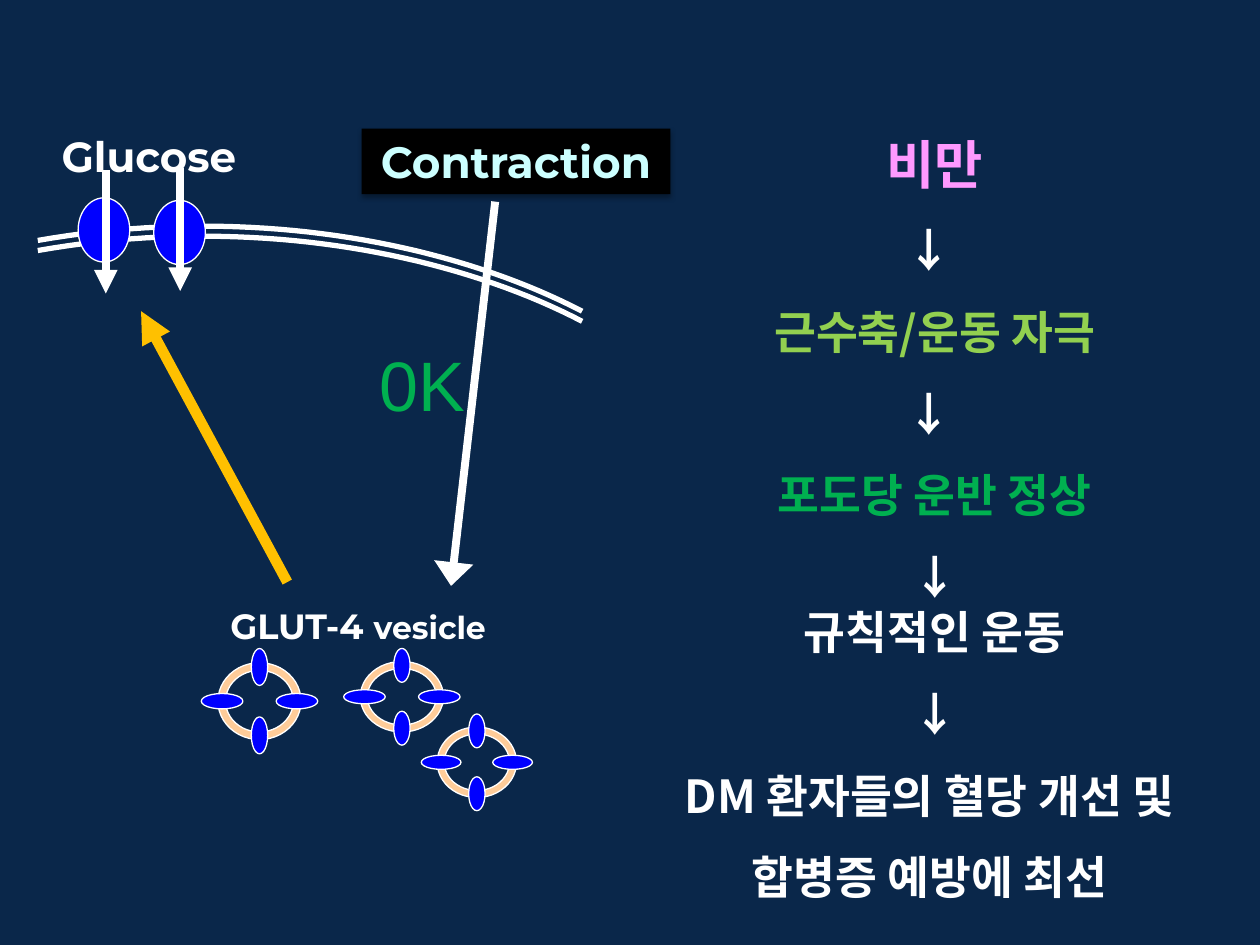
from lxml.etree import SubElement
from pptx import Presentation
from pptx.dml.color import RGBColor
from pptx.enum.shapes import MSO_CONNECTOR, MSO_SHAPE
from pptx.enum.text import MSO_ANCHOR, MSO_AUTO_SIZE, PP_ALIGN
from pptx.oxml.ns import qn
from pptx.util import Inches, Pt

NAVY = RGBColor(0x0A, 0x27, 0x4A)
WHITE = RGBColor(0xFF, 0xFF, 0xFF)
BLACK = RGBColor(0x00, 0x00, 0x00)
BLUE = RGBColor(0x00, 0x00, 0xFF)
PEACH = RGBColor(0xFF, 0xCC, 0x99)
AMBER = RGBColor(0xFF, 0xC0, 0x00)
PINK = RGBColor(0xFF, 0x99, 0xFF)
LIME = RGBColor(0x92, 0xD0, 0x50)
GREEN = RGBColor(0x00, 0xB0, 0x50)
ICE = RGBColor(0xCC, 0xFF, 0xFF)

HEAD = {"name": "Montserrat", "bold": True}
BODY = {"name": "Noto Sans CJK KR", "bold": True}
LABEL = {"word_wrap": False, "auto_size": MSO_AUTO_SIZE.SHAPE_TO_FIT_TEXT}
CENTRED = {"word_wrap": True, "vertical_anchor": MSO_ANCHOR.MIDDLE}


def apply(target, values):
    for key, value in values.items():
        setattr(target, key, value)


def add_run(p, text, size, color, font):
    r = p.add_run()
    r.text = text
    apply(r.font, {**font, "size": Pt(size)})
    r.font.color.rgb = color
    SubElement(r.font._element, qn("a:ea"), typeface=font["name"])


def add_text(s, box, frame):
    tf = s.shapes.add_textbox(*map(Inches, box)).text_frame
    apply(tf, frame)
    return tf


def add_preset(s, kind, box, fill, line=WHITE):
    sp = s.shapes.add_shape(kind, *map(Inches, box))
    sp.shadow.inherit = False
    sp.fill.solid()
    sp.fill.fore_color.rgb = fill
    if line is None:
        sp.line.fill.background()
    else:
        sp.line.color.rgb = line
        sp.line.width = Pt(0.75)
    return sp


def add_arrow(s, start, end, color, width, head="med"):
    c = s.shapes.add_connector(MSO_CONNECTOR.STRAIGHT, *map(Inches, start + end))
    c.line.color.rgb = color
    c.line.width = Pt(width)
    SubElement(c.line._get_or_add_ln(), qn("a:tailEnd"), type="triangle", w=head, len="med")
    SubElement(c._element.spPr, qn("a:effectLst"))


def add_membrane(s, x, y, w, h, steps=40):
    curve = [(0, 0.28), (0.38, -0.09), (0.75, 0.28), (1, 1)]
    points = []
    for i in range(steps + 1):
        t = i / steps
        weights = ((1 - t) ** 3, 3 * t * (1 - t) ** 2, 3 * t * t * (1 - t), t ** 3)
        points.append((Inches(x + w * sum(k * px for k, (px, _) in zip(weights, curve))),
                       Inches(y + h * sum(k * py for k, (_, py) in zip(weights, curve)))))
    for shift in (0.08, 0):
        path = [(px, py + Inches(shift)) for px, py in points]
        builder = s.shapes.build_freeform(*path[0])
        builder.add_line_segments(path[1:], close=False)
        sp = builder.convert_to_shape()
        sp.shadow.inherit = False
        sp.fill.background()
        sp.line.color.rgb = WHITE
        sp.line.width = Pt(3)


def add_transporters(s, x, y):
    for dx, dy in ((0.6, 0.02), (0, 0)):
        add_preset(s, MSO_SHAPE.OVAL, (x + dx, y + dy, 0.41, 0.51), BLUE)
    for dx, dy in ((0.22, -0.22), (0.81, -0.24)):
        add_arrow(s, (x + dx, y + dy), (x + dx, y + dy + 0.98), WHITE, 4.5)
    tf = add_text(s, (x - 0.23, y - 0.58, 1.64, 0.39), LABEL)
    add_run(tf.paragraphs[0], "Glucose", 24, WHITE, HEAD)


def add_vesicle(s, x, y, w, h):
    ring = add_preset(s, MSO_SHAPE.DONUT, (x, y, w, h), PEACH)
    ring.adjustments[0] = 0.1
    cx, cy = x + w / 2, y + h / 2
    for side in (-1, 1):
        pw, ph = 0.13, 0.48 * h
        add_preset(s, MSO_SHAPE.OVAL,
                   (cx - pw / 2, cy + side * 0.445 * h - ph / 2, pw, ph), BLUE)
        pw, ph = 0.2 * h, 0.5 * w
        sp = add_preset(s, MSO_SHAPE.OVAL,
                        (cx + side * 0.45 * w - pw / 2, cy - ph / 2, pw, ph), BLUE)
        sp.rotation = 270


def add_vesicles(s, x, y):
    tf = add_text(s, (x, y, 2.3, 0.34), LABEL)
    for text, size in (("GLUT-4 ", 20), ("vesicle", 18)):
        add_run(tf.paragraphs[0], text, size, WHITE, HEAD)
    for dx, dy, w, h in ((1.13, 0.5, 0.66, 0.56), (1.74, 1.02, 0.63, 0.56),
                         (0, 0.51, 0.66, 0.61)):
        add_vesicle(s, x + dx, y + dy, w, h)


def add_contraction(s, x, y, w, h):
    sp = add_preset(s, MSO_SHAPE.RECTANGLE, (x, y, w, h), BLACK, None)
    effects = sp._element.spPr.find(qn("a:effectLst"))
    shadow = SubElement(effects, qn("a:outerShdw"), blurRad=str(Pt(3.1)),
                        dist=str(Pt(1.8)), dir="5400000", rotWithShape="0")
    color = SubElement(shadow, qn("a:srgbClr"), val=str(BLACK))
    SubElement(color, qn("a:alpha"), val="35000")
    label = add_text(s, (x - 0.19, y + 1.64, 1.34, 0.77), CENTRED)
    texts = ((sp.text_frame, "Contraction", 25, ICE, HEAD),
             (label, "0K", 40, GREEN, {"name": "Arial"}))
    for tf, text, size, tint, font in texts:
        apply(tf, CENTRED)
        p = tf.paragraphs[0]
        p.alignment = PP_ALIGN.CENTER
        add_run(p, text, size, tint, font)


def add_steps(s, x, y, w, h):
    steps = [
        ("비만", 30, PINK, 1.5),
        ("↓ ", 26, WHITE, 1.5),
        ("근수축/운동 자극", 26, LIME, 1.5),
        ("↓ ", 26, WHITE, 1.5),
        ("포도당 운반 정상", 26, GREEN, 1.5),
        ("↓", 26, WHITE, 1.5),
        ("규칙적인 운동", 26, WHITE, 1.0),
        ("↓", 26, WHITE, 1.5),
        ("DM 환자들의 혈당 개선 및 ", 26, WHITE, 1.5),
        ("합병증 예방에 최선 ", 26, WHITE, 1.5),
    ]
    tf = add_text(s, (x, y, w, h), CENTRED)
    for i, (text, size, color, spacing) in enumerate(steps):
        p = tf.add_paragraph() if i else tf.paragraphs[0]
        apply(p, {"alignment": PP_ALIGN.CENTER, "line_spacing": spacing})
        add_run(p, text, size, color, BODY)


def main():
    prs = Presentation()
    apply(prs, {"slide_width": Inches(10), "slide_height": Inches(7.5)})
    s = prs.slides.add_slide(prs.slide_layouts[6])
    s.background.fill.solid()
    s.background.fill.fore_color.rgb = NAVY
    add_steps(s, 4.92, 0.92, 5, 6.13)
    add_membrane(s, 0.3, 1.69, 4.32, 0.78)
    add_arrow(s, (2.28, 4.62), (1.12, 2.47), AMBER, 6)
    add_transporters(s, 0.62, 1.57)
    add_arrow(s, (3.93, 1.6), (3.58, 4.65), WHITE, 4.5, "lg")
    add_vesicles(s, 1.73, 4.75)
    add_contraction(s, 2.87, 1.02, 2.45, 0.52)
    prs.save("out.pptx")


if __name__ == "__main__":
    main()
